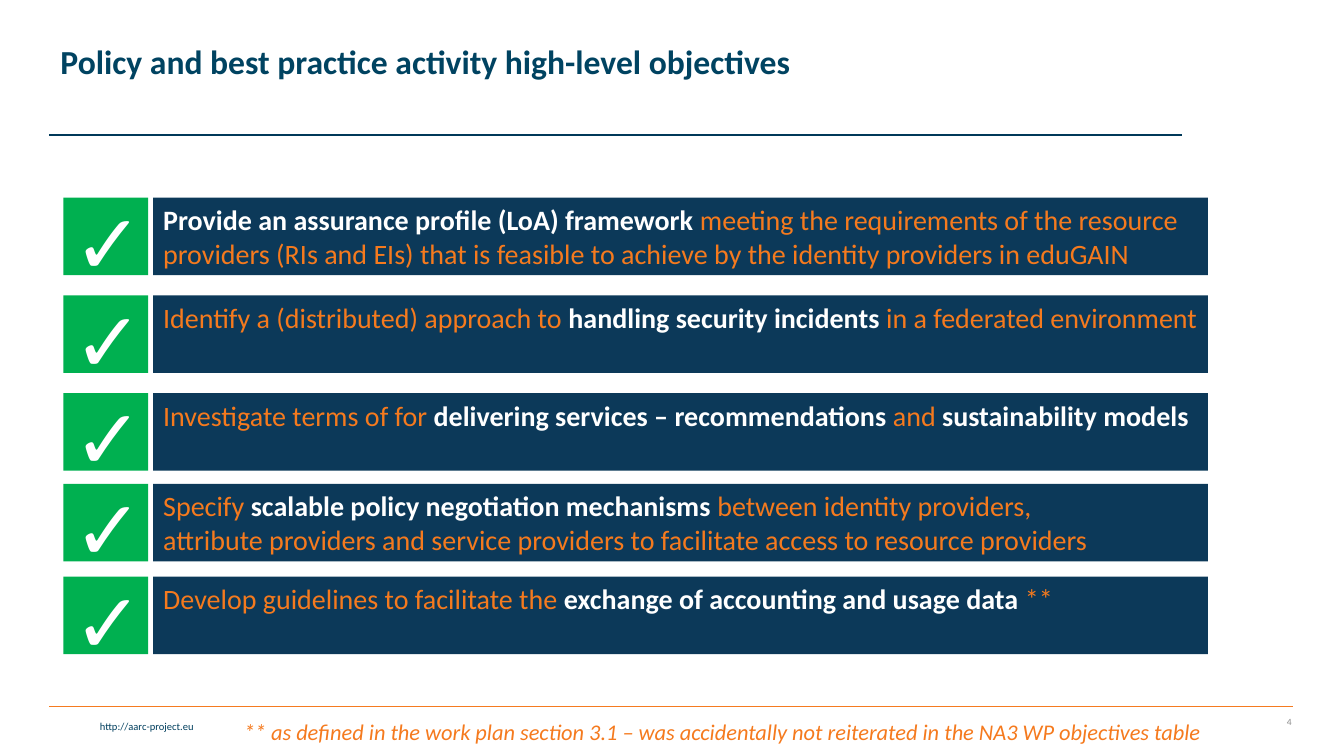
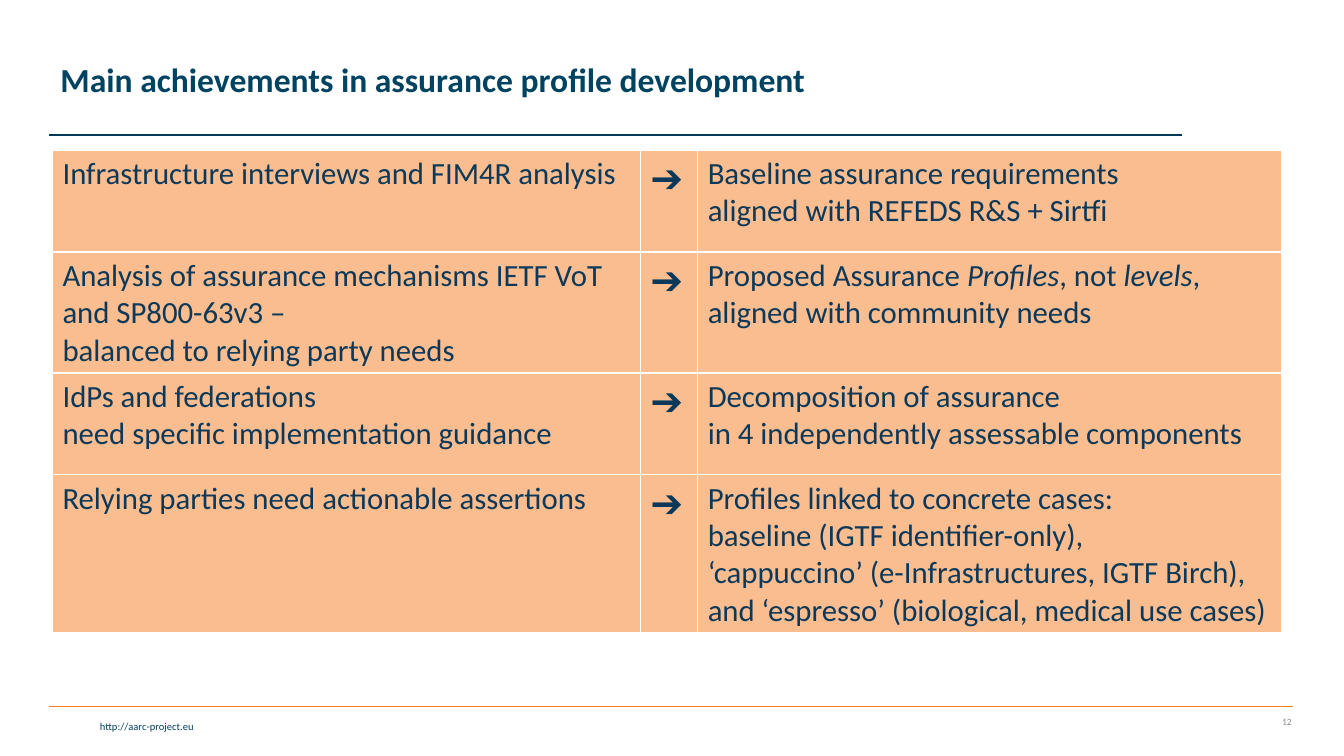
from lxml.etree import SubElement
from pptx import Presentation
from pptx.dml.color import RGBColor
from pptx.enum.shapes import MSO_CONNECTOR, MSO_SHAPE
from pptx.enum.text import MSO_ANCHOR, MSO_AUTO_SIZE, PP_ALIGN
from pptx.oxml.ns import qn
from pptx.util import Inches, Pt

NAVY = RGBColor(0x0C, 0x39, 0x59)
TITLE_BLUE = RGBColor(0x00, 0x43, 0x61)
RULE_BLUE = RGBColor(0x00, 0x39, 0x59)
FOOTER_BLUE = RGBColor(0x00, 0x3F, 0x5E)
RULE_ORANGE = RGBColor(0xF5, 0x7B, 0x20)
ORANGE = RGBColor(0xF5, 0x7A, 0x1E)
PEACH = RGBColor(0xFA, 0xBD, 0x90)
GREEN = RGBColor(0x00, 0xB0, 0x50)
GREY = RGBColor(0x8C, 0x8C, 0x8C)
WHITE = RGBColor(0xFF, 0xFF, 0xFF)

FONT = "Calibri"
CHECK_FONT = "Arial"
BAR_HEIGHT = 0.77

# Each objective: top of its bar and its spans, where True marks emphasis.
OBJECTIVES = [
    (1.96, [("Provide an assurance profile (LoA) framework ", True),
            ("meeting the requirements of the resource providers (RIs and EIs) that is "
             "feasible to achieve by the identity providers in eduGAIN", False)]),
    (2.93, [("Identify a (distributed) approach to ", False),
            ("handling security incidents ", True),
            ("in a federated environment", False)]),
    (3.9, [("Investigate terms of for ", False),
           ("delivering services – recommendations ", True),
           ("and ", False),
           ("sustainability models", True)]),
    (4.8, [("Specify ", False),
           ("scalable policy negotiation mechanisms ", True),
           ("between identity providers,\nattribute providers and service providers "
            "to facilitate access to resource providers", False)]),
    (5.72, [("Develop guidelines to facilitate the ", False),
            ("exchange of accounting and usage data ", True),
            ("**", False)]),
]

# Each achievement: the finding and the spans of its outcome, where True marks italics.
ACHIEVEMENTS = [
    ("Infrastructure interviews and FIM4R analysis",
     [("Baseline assurance requirements\naligned with REFEDS R&S + Sirtfi", False)]),
    ("Analysis of assurance mechanisms IETF VoT and SP800-63v3 –\n"
     "balanced to relying party needs",
     [("Proposed Assurance ", False), ("Profiles", True), (", not ", False),
      ("levels", True), (",\naligned with community needs", False)]),
    ("IdPs and federations\nneed specific implementation guidance",
     [("Decomposition of assurance\nin 4 independently assessable components", False)]),
    ("Relying parties need actionable assertions",
     [("Profiles linked to concrete cases:\nbaseline (IGTF identifier-only),\n"
       "‘cappuccino’ (e-Infrastructures, IGTF Birch), and ‘espresso’ "
       "(biological, medical use cases)", False)]),
]
COLUMN_WIDTHS = [5.83, 0.57, 5.79]
ROW_HEIGHT = 1.01


def add_span(para, text, size, color, bold=False, italic=False, font=FONT):
    """Append text to the paragraph, with a line break at each newline."""
    for index, line in enumerate(text.split("\n")):
        if index:
            para.add_line_break()
        if not line:
            continue
        span = para.add_run()
        span.text = line
        span.font.name = font
        span.font.size = Pt(size)
        span.font.bold = bold
        span.font.italic = italic
        span.font.color.rgb = color


def add_label(slide, left, top, width, height, text, size, color,
              align=PP_ALIGN.LEFT, anchor=MSO_ANCHOR.TOP, wrap=True, **style):
    box = slide.shapes.add_textbox(Inches(left), Inches(top), Inches(width), Inches(height))
    frame = box.text_frame
    frame.word_wrap = wrap
    frame.vertical_anchor = anchor
    para = frame.paragraphs[0]
    para.alignment = align
    add_span(para, text, size, color, **style)


def add_rule(slide, left, right, top, color):
    rule = slide.shapes.add_connector(
        MSO_CONNECTOR.STRAIGHT, Inches(left), Inches(top), Inches(right), Inches(top))
    rule.line.color.rgb = color
    rule.line.width = Pt(1)
    SubElement(rule._element.spPr, qn("a:effectLst"))


def add_bar(slide, left, top, width, color):
    bar = slide.shapes.add_shape(
        MSO_SHAPE.RECTANGLE, Inches(left), Inches(top), Inches(width), Inches(BAR_HEIGHT))
    bar.shadow.inherit = False
    bar.fill.solid()
    bar.fill.fore_color.rgb = color
    bar.line.fill.background()
    return bar


def add_page(deck, title, number, title_height):
    """Add a slide with the title, rules and footer that all slides share."""
    slide = deck.slides.add_slide(deck.slide_layouts[5])
    add_rule(slide, 0.49, 12.82, 7.01, RULE_ORANGE)
    add_rule(slide, 0.49, 11.72, 1.34, RULE_BLUE)
    add_label(slide, 0.03, 7.09, 1.99, 0.23, "http://aarc-project.eu", 7.5, FOOTER_BLUE,
              align=PP_ALIGN.RIGHT)
    add_label(slide, 12.1, 7.01, 0.81, 0.3, str(number), 6.8, GREY,
              align=PP_ALIGN.RIGHT, anchor=MSO_ANCHOR.MIDDLE)
    heading = slide.shapes.title
    heading.left, heading.top = Inches(0.5), Inches(0.08)
    heading.width, heading.height = Inches(10.51), Inches(title_height)
    frame = heading.text_frame
    frame.auto_size = MSO_AUTO_SIZE.NONE
    frame.vertical_anchor = MSO_ANCHOR.MIDDLE
    para = frame.paragraphs[0]
    para.alignment = PP_ALIGN.LEFT
    para.line_spacing = 0.9
    add_span(para, title, 24, TITLE_BLUE, bold=True)
    return slide


def add_objective(slide, top, spans):
    """Add a green check tile and the navy bar beside it."""
    add_bar(slide, 0.63, top, 0.84, GREEN)
    bar = add_bar(slide, 1.52, top, 10.46, NAVY)
    frame = bar.text_frame
    frame.word_wrap = True
    frame.vertical_anchor = MSO_ANCHOR.TOP
    para = frame.paragraphs[0]
    para.alignment = PP_ALIGN.LEFT
    for text, strong in spans:
        add_span(para, text, 20, WHITE if strong else ORANGE, bold=strong)
    add_label(slide, 0.63, top - 0.12, 0.7, 1.11, "✓", 60, WHITE, font=CHECK_FONT)


def style_cell(cell):
    """Give the cell thin white borders and a peach fill."""
    properties = cell._tc.get_or_add_tcPr()
    for side in ("a:lnL", "a:lnR", "a:lnT", "a:lnB"):
        border = SubElement(properties, qn(side), w=str(Pt(1)))
        fill = SubElement(border, qn("a:solidFill"))
        SubElement(fill, qn("a:srgbClr"), val=str(WHITE))
    cell.fill.solid()
    cell.fill.fore_color.rgb = PEACH


def add_achievements(slide):
    table = slide.shapes.add_table(
        len(ACHIEVEMENTS), len(COLUMN_WIDTHS), Inches(0.52), Inches(1.49),
        Inches(sum(COLUMN_WIDTHS)), Inches(ROW_HEIGHT * len(ACHIEVEMENTS))).table
    table.first_row = False
    table.horz_banding = False
    for column, width in zip(table.columns, COLUMN_WIDTHS):
        column.width = Inches(width)
    for row, (finding, outcome) in zip(table.rows, ACHIEVEMENTS):
        row.height = Inches(ROW_HEIGHT)
        contents = [([(finding, False)], 22), ([("➔", False)], 28), (outcome, 22)]
        for cell, (spans, size) in zip(row.cells, contents):
            style_cell(cell)
            para = cell.text_frame.paragraphs[0]
            for text, italic in spans:
                add_span(para, text, size, NAVY, italic=italic)


def build_objectives(deck):
    slide = add_page(deck, "Policy and best practice activity high-level objectives", 4, 1.11)
    for top, spans in OBJECTIVES:
        add_objective(slide, top, spans)
    add_label(slide, 2.32, 7.08, 9.77, 0.37,
              "** as defined in the work plan section 3.1 – was accidentally not "
              "reiterated in the NA3 WP objectives table",
              16, ORANGE, wrap=False, italic=True)


def build_achievements(deck):
    slide = add_page(deck, "Main achievements in assurance profile development", 12, 1.45)
    add_achievements(slide)


def main():
    deck = Presentation()
    deck.slide_width, deck.slide_height = Inches(13.33), Inches(7.5)
    build_objectives(deck)
    build_achievements(deck)
    deck.save("out.pptx")


if __name__ == "__main__":
    main()
